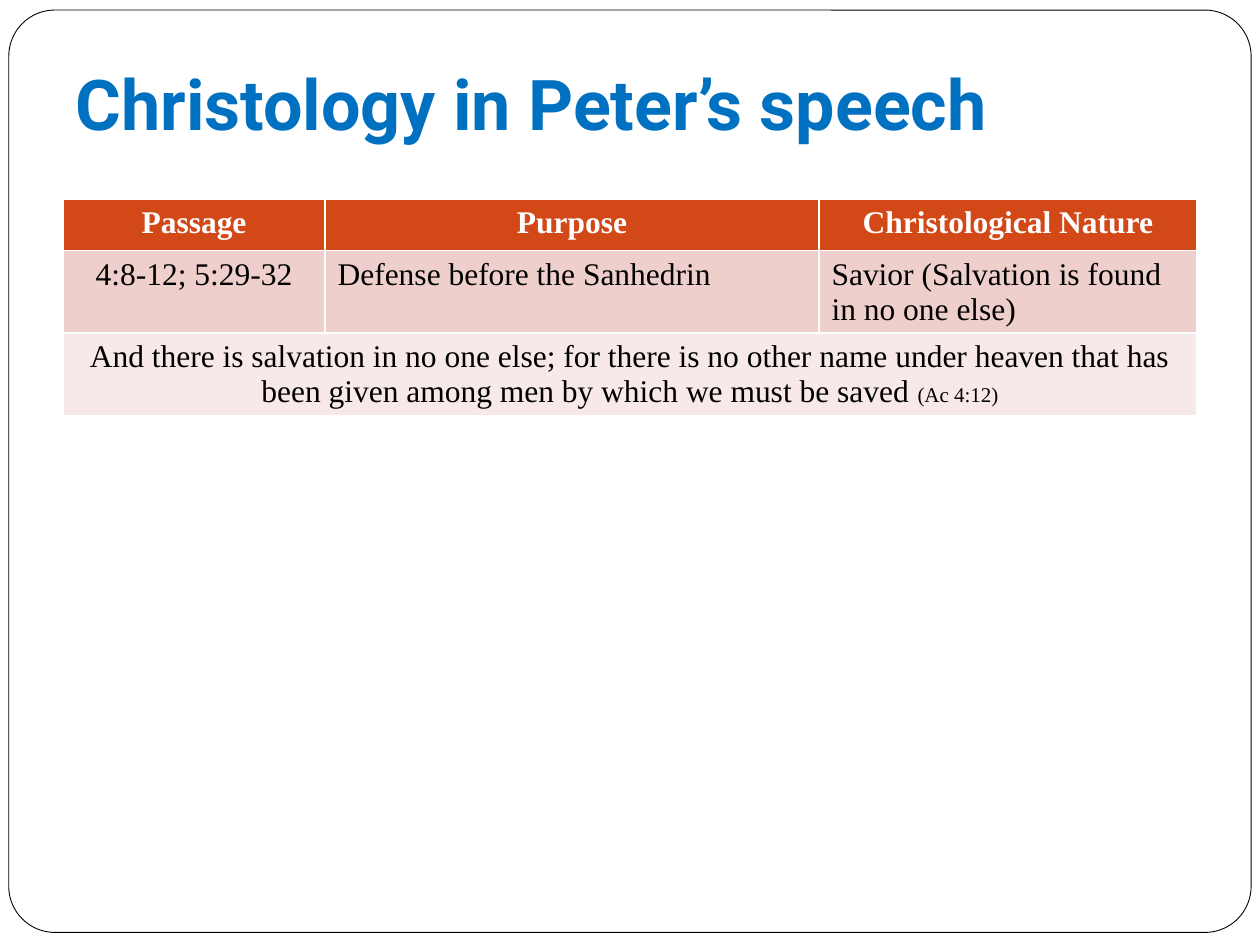
from pptx import Presentation
from pptx.dml.color import RGBColor
from pptx.enum.shapes import MSO_SHAPE
from pptx.enum.text import MSO_ANCHOR, MSO_AUTO_SIZE, PP_ALIGN
from pptx.util import Inches, Pt

BLACK = RGBColor(0x00, 0x00, 0x00)
WHITE = RGBColor(0xFF, 0xFF, 0xFF)
BLUE = RGBColor(0x00, 0x70, 0xC0)
ORANGE = RGBColor(0xD3, 0x48, 0x17)
ROSE = RGBColor(0xEF, 0xCF, 0xCC)
PALE_ROSE = RGBColor(0xF7, 0xE9, 0xE8)

TITLE = {"name": "Roboto", "size": Pt(40), "bold": True}
HEADER = {"name": "Times New Roman", "size": Pt(18), "bold": True}
BODY = {**HEADER, "bold": False}
CITATION = {**BODY, "size": Pt(12)}

COLUMN_WIDTHS = (2.08, 3.92, 3)
ROW_HEIGHT = 0.41
HEADINGS = ("Passage", "Purpose", "Christological Nature")
SPEECH = (
    ("4:8-12; 5:29-32", PP_ALIGN.CENTER),
    ("Defense before the Sanhedrin", PP_ALIGN.LEFT),
    ("Savior (Salvation is found in no one else)", PP_ALIGN.LEFT),
)
VERSE = (
    "And there is salvation in no one else; for there is no other name under heaven "
    "that has been given among men by which we must be saved "
)


class SlideBuilder:
    """Holds the current slide and draws each kind of element in one style."""

    def __init__(self, slide):
        self.slide = slide

    def add_span(self, para, text, style, color, align):
        para.alignment = align
        span = para.add_run()
        span.text = text
        for name, value in style.items():
            setattr(span.font, name, value)
        span.font.color.rgb = color

    def frame(self, left, top, width, height):
        box = self.slide.shapes.add_shape(
            MSO_SHAPE.ROUNDED_RECTANGLE, Inches(left), Inches(top), Inches(width), Inches(height)
        )
        box.adjustments[0] = 0.05
        box.shadow.inherit = False
        box.fill.solid()
        box.fill.fore_color.rgb = WHITE
        box.line.color.rgb = BLACK
        box.line.width = Pt(0.5)
        box.element.getparent().insert(2, box.element)

    def title(self, text, left, top, width, height):
        box = self.slide.shapes.title
        place = {"left": left, "top": top, "width": width, "height": height}
        for name, value in place.items():
            setattr(box, name, Inches(value))
        layout = {
            "vertical_anchor": MSO_ANCHOR.BOTTOM,
            "auto_size": MSO_AUTO_SIZE.NONE,
            "word_wrap": True,
            "margin_bottom": Inches(0.1),
        }
        for name, value in layout.items():
            setattr(box.text_frame, name, value)
        self.add_span(box.text_frame.paragraphs[0], text, TITLE, BLUE, PP_ALIGN.LEFT)

    def table(self, row_count, left, top, height):
        holder = self.slide.shapes.add_table(
            row_count, len(COLUMN_WIDTHS), Inches(left), Inches(top),
            Inches(sum(COLUMN_WIDTHS)), Inches(height),
        )
        for column, width in zip(holder.table.columns, COLUMN_WIDTHS):
            column.width = Inches(width)
        for row in holder.table.rows:
            row.height = Inches(ROW_HEIGHT)
        holder.height = Inches(height)
        return holder.table

    def cell(self, cell, text, style, color, fill, align=PP_ALIGN.CENTER):
        cell.fill.solid()
        cell.fill.fore_color.rgb = fill
        para = cell.text_frame.paragraphs[0]
        self.add_span(para, text, style, color, align)
        return para


def main():
    deck = Presentation()
    deck.slide_width = Inches(10)
    deck.slide_height = Inches(7.5)
    builder = SlideBuilder(deck.slides.add_slide(deck.slide_layouts[5]))

    builder.frame(0.07, 0.08, 9.86, 7.32)
    builder.title("Christology in Peter’s speech", 0.5, 0.3, 9, 0.95)

    table = builder.table(3, 0.5, 1.58, 1.81)
    for column, heading in enumerate(HEADINGS):
        builder.cell(table.cell(0, column), heading, HEADER, WHITE, ORANGE)
    for column, (text, align) in enumerate(SPEECH):
        builder.cell(table.cell(1, column), text, BODY, BLACK, ROSE, align)

    verse_cell = table.cell(2, 0)
    verse_cell.merge(table.cell(2, 2))
    para = builder.cell(verse_cell, VERSE, BODY, BLACK, PALE_ROSE)
    builder.add_span(para, "(Ac 4:12)", CITATION, BLACK, PP_ALIGN.CENTER)

    deck.save("out.pptx")


if __name__ == "__main__":
    main()
